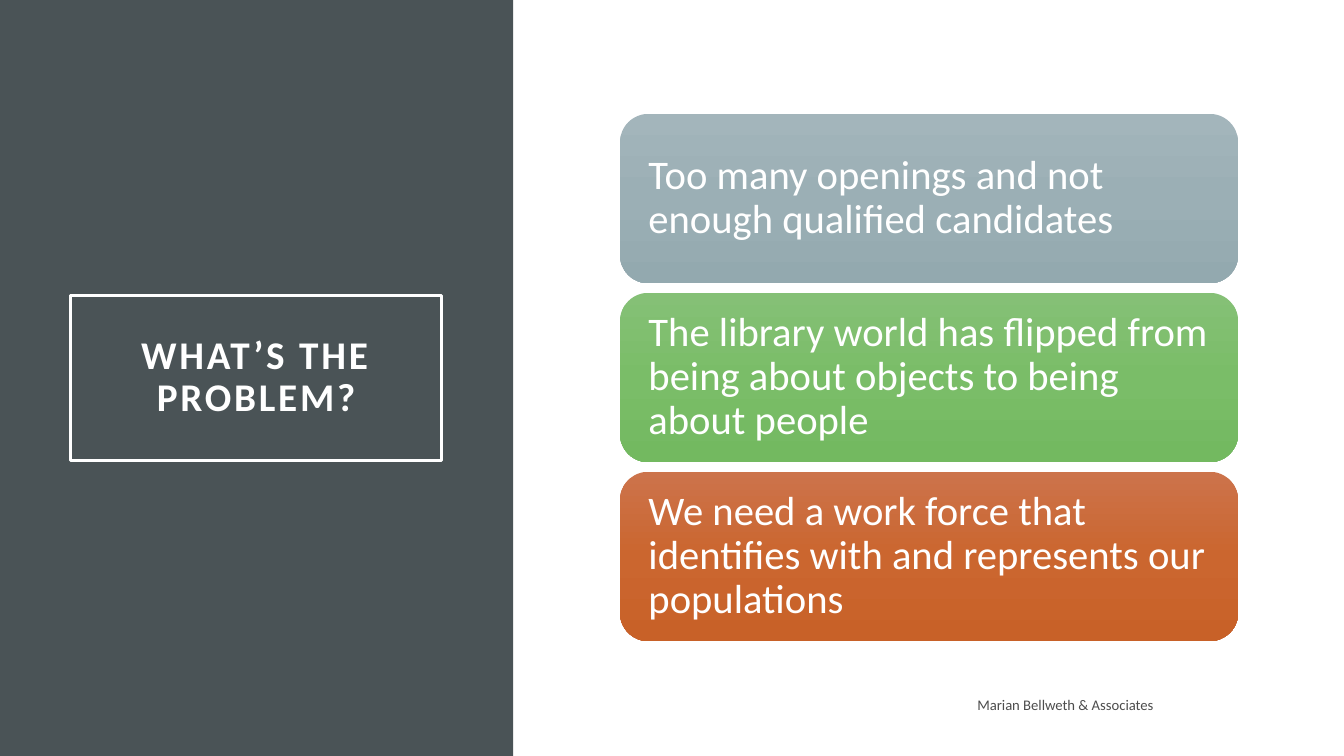
from dataclasses import dataclass

from lxml.etree import SubElement
from pptx import Presentation
from pptx.dml.color import RGBColor
from pptx.enum.shapes import MSO_SHAPE
from pptx.enum.text import MSO_ANCHOR, MSO_AUTO_SIZE, PP_ALIGN
from pptx.oxml.ns import qn
from pptx.util import Inches, Pt


@dataclass(frozen=True)
class Theme:
    font: str = "Calibri"
    white: str = "FFFFFF"
    panel: str = "4A5356"
    footer: str = "4D4D4D"
    title_size: float = 28
    card_size: float = 29
    footer_size: float = 10.5
    slate: tuple = ("A3B5BB", "9BAFB5", "93A9AF")
    green: tuple = ("85C076", "7ABD68", "73B960")
    rust: tuple = ("CC734B", "CB662F", "C86128")


THEME = Theme()
SLIDE_W, SLIDE_H = 13.33, 7.5

# Card column: left, top, width, height and distance between tops
CARD_X, CARD_Y, CARD_W, CARD_H, CARD_STEP = 6.15, 1.13, 6.13, 1.68, 1.775

CARDS = [
    ("Too many openings and not enough qualified candidates", THEME.slate),
    ("The library world has flipped from being about objects to being about people", THEME.green),
    ("We need a work force that identifies with and represents our populations", THEME.rust),
]


def write(shape, text, size, color, align, inset_x, inset_y, bold=False, spacing=None):
    """Put one formatted, vertically centred run in a shape."""
    tf = shape.text_frame
    tf.word_wrap = True
    tf.auto_size = MSO_AUTO_SIZE.NONE
    tf.vertical_anchor = MSO_ANCHOR.MIDDLE
    tf.margin_left = tf.margin_right = Inches(inset_x)
    tf.margin_top = tf.margin_bottom = Inches(inset_y)
    p = tf.paragraphs[0]
    p.alignment = align
    p.line_spacing = spacing
    r = p.add_run()
    r.text = text
    r.font.name = THEME.font
    r.font.size = Pt(size)
    r.font.bold = bold
    r.font.color.rgb = RGBColor.from_string(color)
    return r


def add_block(s, kind, x, y, w, h):
    """Add a preset shape without outline or shadow."""
    block = s.shapes.add_shape(kind, Inches(x), Inches(y), Inches(w), Inches(h))
    block.shadow.inherit = False
    block.line.fill.background()
    return block


def fill_down(shape, colors):
    """Fill with an evenly spaced gradient running from top to bottom."""
    shape.fill.gradient()
    grad = shape.element.spPr.find(qn("a:gradFill"))
    stops = grad.find(qn("a:gsLst"))
    for stop in list(stops):
        stops.remove(stop)
    for i, color in enumerate(colors):
        stop = SubElement(stops, qn("a:gs"), pos=str(i * 100000 // (len(colors) - 1)))
        SubElement(stop, qn("a:srgbClr"), val=color)
    lin = grad.find(qn("a:lin"))
    lin.set("ang", "5400000")
    lin.set("scaled", "0")


def add_panel(s):
    panel = add_block(s, MSO_SHAPE.RECTANGLE, 0, 0, 5.09, SLIDE_H)
    panel.fill.solid()
    panel.fill.fore_color.rgb = RGBColor.from_string(THEME.panel)


def add_title(s, text):
    title = s.shapes.title
    title.left, title.top = Inches(0.7), Inches(2.93)
    title.width, title.height = Inches(3.68), Inches(1.64)
    title.line.color.rgb = RGBColor.from_string(THEME.white)
    title.line.width = Pt(2.5)
    r = write(title, text, THEME.title_size, THEME.white, PP_ALIGN.CENTER,
              0.2, 0.2, bold=True, spacing=0.9)
    r.font._element.set("spc", "200")
    # Bring the title in front of the panel
    s.shapes._spTree.append(title.element)


def add_card(s, row, text, colors):
    card = add_block(s, MSO_SHAPE.ROUNDED_RECTANGLE,
                     CARD_X, CARD_Y + row * CARD_STEP, CARD_W, CARD_H)
    fill_down(card, colors)
    write(card, text, THEME.card_size, THEME.white, PP_ALIGN.LEFT, 0.2, 0.12, spacing=0.9)


def add_footer(s, text):
    box = s.shapes.add_textbox(Inches(6.32), Inches(6.82), Inches(5.22), Inches(0.35))
    write(box, text, THEME.footer_size, THEME.footer, PP_ALIGN.RIGHT, 0.1, 0.05)


def main():
    prs = Presentation()
    prs.slide_width, prs.slide_height = Inches(SLIDE_W), Inches(SLIDE_H)
    s = prs.slides.add_slide(prs.slide_layouts[5])

    # Left side
    add_panel(s)
    add_title(s, "WHAT’S THE PROBLEM?")

    # Right side
    add_footer(s, "Marian Bellweth & Associates")
    for row, (text, colors) in enumerate(CARDS):
        add_card(s, row, text, colors)

    prs.save("out.pptx")


if __name__ == "__main__":
    main()
